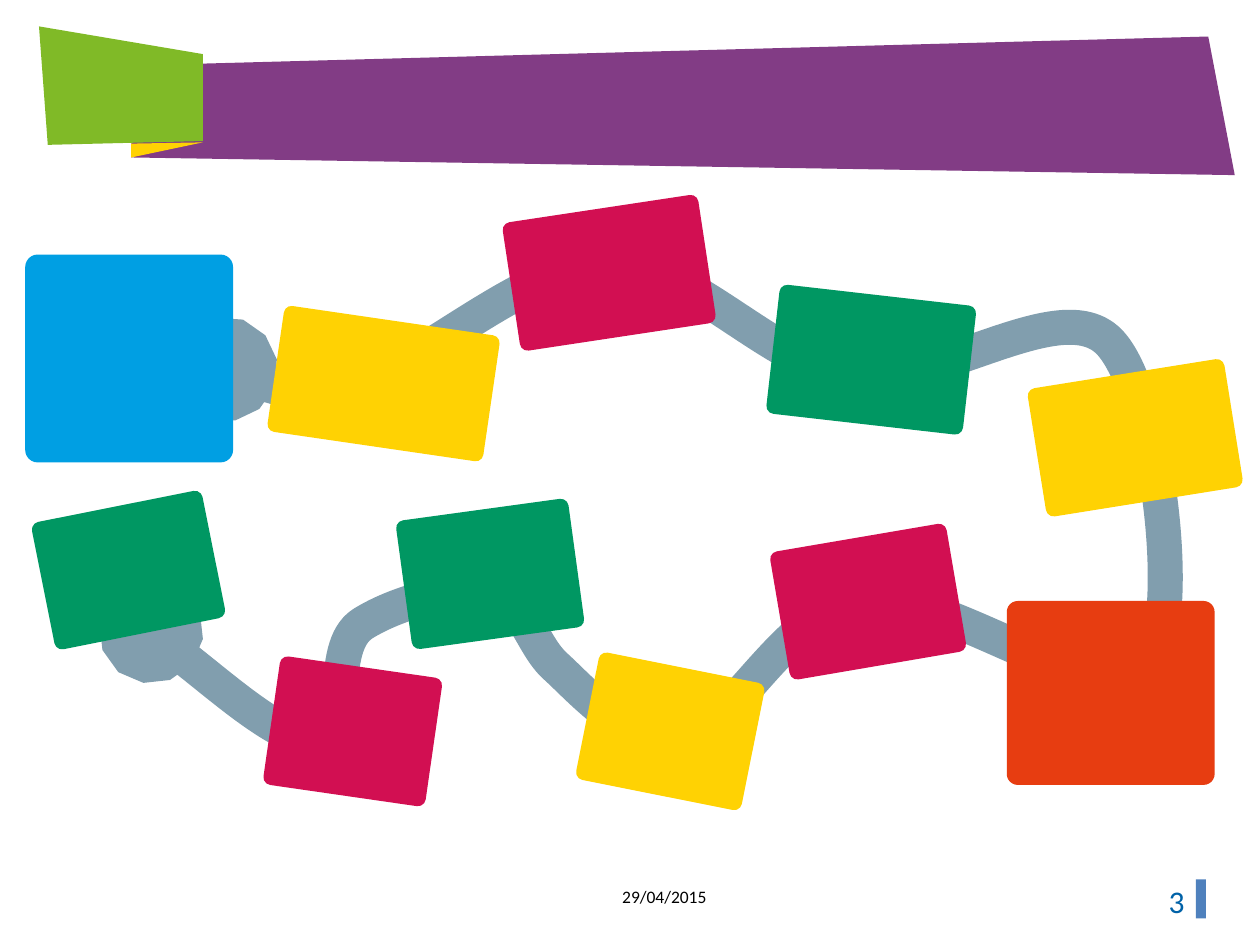
from lxml import etree
from pptx import Presentation
from pptx.dml.color import RGBColor
from pptx.enum.shapes import MSO_SHAPE
from pptx.enum.text import MSO_ANCHOR, PP_ALIGN
from pptx.oxml.ns import qn
from pptx.util import Inches, Pt

PURPLE = RGBColor(0x82, 0x3C, 0x85)
LIME = RGBColor(0x80, 0xBA, 0x27)
YELLOW = RGBColor(0xFF, 0xD2, 0x03)
ACCENT = RGBColor(0x4F, 0x81, 0xBD)
ROAD = RGBColor(0x81, 0x9E, 0xAE)
BLUE = RGBColor(0x00, 0x9F, 0xE3)
ORANGE = RGBColor(0xE7, 0x3D, 0x11)
RED = RGBColor(0xD2, 0x0F, 0x52)
GREEN = RGBColor(0x00, 0x97, 0x62)
BLACK = RGBColor(0x00, 0x00, 0x00)
NUMBER = RGBColor(0x00, 0x62, 0xA8)

prs = Presentation()
prs.slide_width, prs.slide_height = Inches(10), Inches(7.5)
s = prs.slides.add_slide(prs.slide_layouts[6])


def outline(points, close):
    pts = [(Inches(x), Inches(y)) for x, y in points]
    builder = s.shapes.build_freeform(*pts[0])
    builder.add_line_segments(pts[1:], close=close)
    sp = builder.convert_to_shape()
    sp.shadow.inherit = False
    return sp


def paint(sp, color):
    sp.shadow.inherit = False
    sp.fill.solid()
    sp.fill.fore_color.rgb = color
    sp.line.fill.background()


banner = [(1.04, 1.25), (1.06, 0.52), (9.59, 0.29), (9.8, 1.39)]
flag = [(0.31, 0.21), (0.38, 1.15), (1.61, 1.12), (1.61, 0.43)]
fold = [(1.04, 1.14), (1.04, 1.25), (1.61, 1.13)]
for points, color in [(banner, PURPLE), (flag, LIME), (fold, YELLOW)]:
    paint(outline(points, True), color)

bar = s.shapes.add_shape(MSO_SHAPE.RECTANGLE, Inches(9.49), Inches(6.98), Inches(0.08), Inches(0.31))
paint(bar, ACCENT)

road_points = [
    (1.79, 2.93),
    (2.06, 3.05), (2.34, 3.17), (2.85, 3.03),
    (3.36, 2.89), (4.18, 2.1), (4.83, 2.09),
    (5.48, 2.09), (6.1, 2.88), (6.76, 2.98),
    (7.42, 3.08), (8.41, 2.32), (8.8, 2.71),
    (9.19, 3.1), (9.42, 4.99), (9.09, 5.33),
    (8.77, 5.67), (7.45, 4.67), (6.84, 4.76),
    (6.23, 4.85), (5.83, 5.77), (5.42, 5.86),
    (5.02, 5.95), (4.6, 5.46), (4.41, 5.29),
    (4.22, 5.12), (4.16, 4.77), (3.91, 4.71),
    (3.65, 4.65), (3.17, 4.77), (2.88, 4.95),
    (2.58, 5.14), (2.81, 5.87), (2.53, 5.88),
    (2.25, 5.89), (1.2, 5.01), (1.2, 5.01),
]
road = outline(road_points, False)
road.fill.background()
road.line.color.rgb = ROAD
road.line.width = Pt(20)
segments = road.element.findall(".//" + qn("a:lnTo"))
for i in range(0, len(segments), 3):
    curve = etree.Element(qn("a:cubicBezTo"))
    segments[i].addprevious(curve)
    for segment in segments[i:i + 3]:
        curve.append(segment[0])
        segment.getparent().remove(segment)
ln = road.element.spPr.find(qn("a:ln"))
for end in ("a:headEnd", "a:tailEnd"):
    etree.SubElement(ln, qn(end), type="oval")

for text, x, y, w, h, size, color, align, anchor in [
    ("29/04/2015", 4.84, 6.98, 1.5, 0.25, 10, BLACK, PP_ALIGN.LEFT, MSO_ANCHOR.TOP),
    ("3", 7.17, 6.95, 2.33, 0.4, 18, NUMBER, PP_ALIGN.RIGHT, MSO_ANCHOR.MIDDLE),
]:
    tf = s.shapes.add_textbox(Inches(x), Inches(y), Inches(w), Inches(h)).text_frame
    tf.word_wrap = True
    tf.vertical_anchor = anchor
    tf.text = text
    p = tf.paragraphs[0]
    p.alignment = align
    font = p.runs[0].font
    font.name, font.size = "Calibri", Pt(size)
    font.color.rgb = color

for x, y, w, h, angle, color in [
    (0.2, 2.02, 1.65, 1.65, 0, BLUE),
    (7.99, 4.77, 1.65, 1.46, 0, ORANGE),
    (2.18, 2.54, 1.73, 1.01, 8.3, YELLOW),
    (4.05, 1.65, 1.57, 1.03, -8.6, RED),
    (6.13, 2.34, 1.57, 1.03, 6.5, GREEN),
    (8.22, 2.96, 1.58, 1.03, -9.1, YELLOW),
    (6.18, 4.26, 1.42, 1.03, -9.7, RED),
    (4.65, 5.29, 1.34, 1.03, 11.3, YELLOW),
    (3.2, 4.04, 1.38, 1.03, -7.8, GREEN),
    (2.15, 5.29, 1.3, 1.03, 8.2, RED),
    (0.33, 4.01, 1.38, 1.03, -11.3, GREEN),
]:
    card = s.shapes.add_shape(MSO_SHAPE.ROUNDED_RECTANGLE, Inches(x), Inches(y), Inches(w), Inches(h))
    card.adjustments[0] = 0.06
    card.rotation = angle
    paint(card, color)

prs.save("out.pptx")
